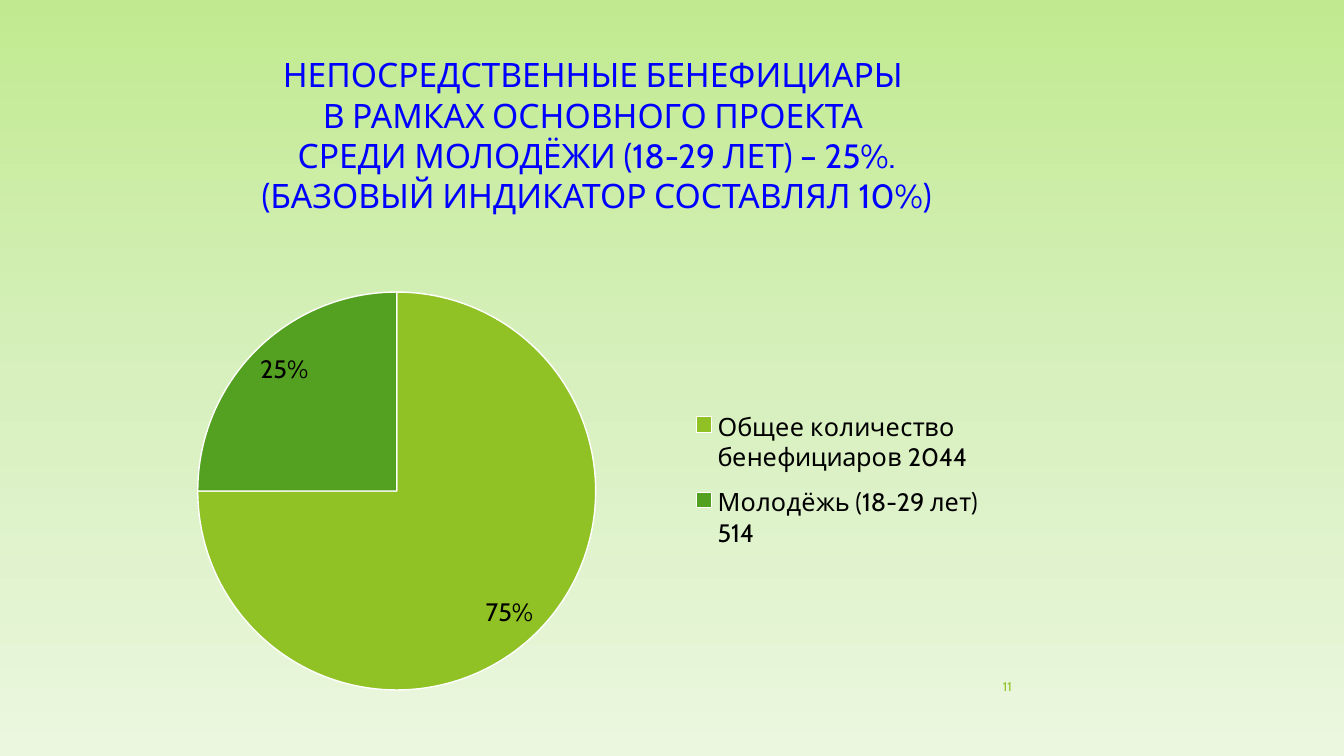
from copy import deepcopy
from lxml import etree
from pptx import Presentation
from pptx.chart.data import CategoryChartData
from pptx.dml.color import RGBColor
from pptx.enum.chart import XL_CHART_TYPE, XL_LABEL_POSITION, XL_LEGEND_POSITION
from pptx.enum.text import MSO_ANCHOR, PP_ALIGN
from pptx.oxml.ns import qn
from pptx.util import Cm, Pt

PIE = XL_CHART_TYPE.PIE
INSIDE = XL_LABEL_POSITION.INSIDE_END
RIGHT = XL_LEGEND_POSITION.RIGHT
TOP, MIDDLE = MSO_ANCHOR.TOP, MSO_ANCHOR.MIDDLE
CENTER, FLUSH = PP_ALIGN.CENTER, PP_ALIGN.RIGHT

COLORS = {
    "top": "C1EA90", "mid": "D7F0BD", "base": "EBF7DF",
    "title": "0000FF", "lime": "90C226", "green": "54A021",
    "text": "000000", "edge": "FFFFFF",
}


def style(font, size, color):
    font.name = "Cabin"
    font.size = Pt(size)
    font.color.rgb = RGBColor.from_string(COLORS[color])


def arrange(node, index, inner, box):
    for old in node.findall(qn("c:layout")):
        node.remove(old)
    layout = etree.Element(qn("c:layout"))
    manual = etree.SubElement(layout, qn("c:manualLayout"))
    if inner:
        etree.SubElement(manual, qn("c:layoutTarget")).set("val", "inner")
    for tag in ("xMode", "yMode"):
        etree.SubElement(manual, qn("c:" + tag)).set("val", "edge")
    for tag, part in zip("xywh", box):
        etree.SubElement(manual, qn("c:" + tag)).set("val", str(part))
    node.insert(index, layout)


prs = Presentation()
prs.slide_width, prs.slide_height = Cm(33.87), Cm(19.05)
slide = prs.slides.add_slide(prs.slide_layouts[5])

back = slide.background.fill
back.gradient()
back.gradient_angle = 270
stops = slide.element.find(".//" + qn("a:gsLst"))
stops.append(deepcopy(stops[-1]))
for stop, name, place in zip(back.gradient_stops, ("top", "mid", "base"), (0, 0.5, 1)):
    stop.color.rgb = RGBColor.from_string(COLORS[name])
    stop.position = place

title = slide.shapes.title
title.left, title.top, title.width, title.height = Cm(1.88), Cm(1.24), Cm(26.31), Cm(5.41)
frame = title.text_frame
frame.text = "\v".join((
    "НЕПОСРЕДСТВЕННЫЕ БЕНЕФИЦИАРЫ ",
    "В РАМКАХ ОСНОВНОГО ПРОЕКТА ",
    "СРЕДИ МОЛОДЁЖИ (18-29 ЛЕТ) – 25%.",
    "(БАЗОВЫЙ ИНДИКАТОР СОСТАВЛЯЛ 10%)",
))
frame.vertical_anchor = TOP
para = frame.paragraphs[0]
para.alignment = CENTER
style(para.font, 24, "title")

page = slide.shapes.add_textbox(Cm(23.85), Cm(16.79), Cm(1.9), Cm(1.02))
frame = page.text_frame
frame.word_wrap = True
frame.text = "11"
frame.vertical_anchor = MIDDLE
para = frame.paragraphs[0]
para.alignment = FLUSH
style(para.font, 9, "lime")

data = CategoryChartData()
data.categories = ["Общее количество бенефициаров 2044 ", "Молодёжь (18-29 лет) 514"]
data.add_series("Series 1", (75, 25))
chart = slide.shapes.add_chart(PIE, Cm(1.88), Cm(6.99), Cm(23.88), Cm(10.77), data).chart
chart.has_title = False
style(chart.font, 18, "text")

chart.has_legend = True
legend = chart.legend
legend.position = RIGHT
legend.include_in_layout = False
style(legend.font, 18, "text")

plot = chart.plots[0]
plot.vary_by_categories = True
for i, name in enumerate(("lime", "green")):
    look = plot.series[0].points[i].format
    look.fill.solid()
    look.fill.fore_color.rgb = RGBColor.from_string(COLORS[name])
    look.line.color.rgb = RGBColor.from_string(COLORS["edge"])
    look.line.width = Pt(1)

plot.has_data_labels = True
labels = plot.data_labels
labels.show_percentage = True
labels.show_value = False
labels.number_format = "0%"
labels.number_format_is_linked = False
labels.position = INSIDE
style(labels.font, 18, "text")

root = chart.element
arrange(root.find(".//" + qn("c:plotArea")), 0, True, (0.13, 0.03, 0.42, 0.94))
arrange(root.find(".//" + qn("c:legend")), 1, False, (0.64, 0.28, 0.33, 0.39))

prs.save("out.pptx")
